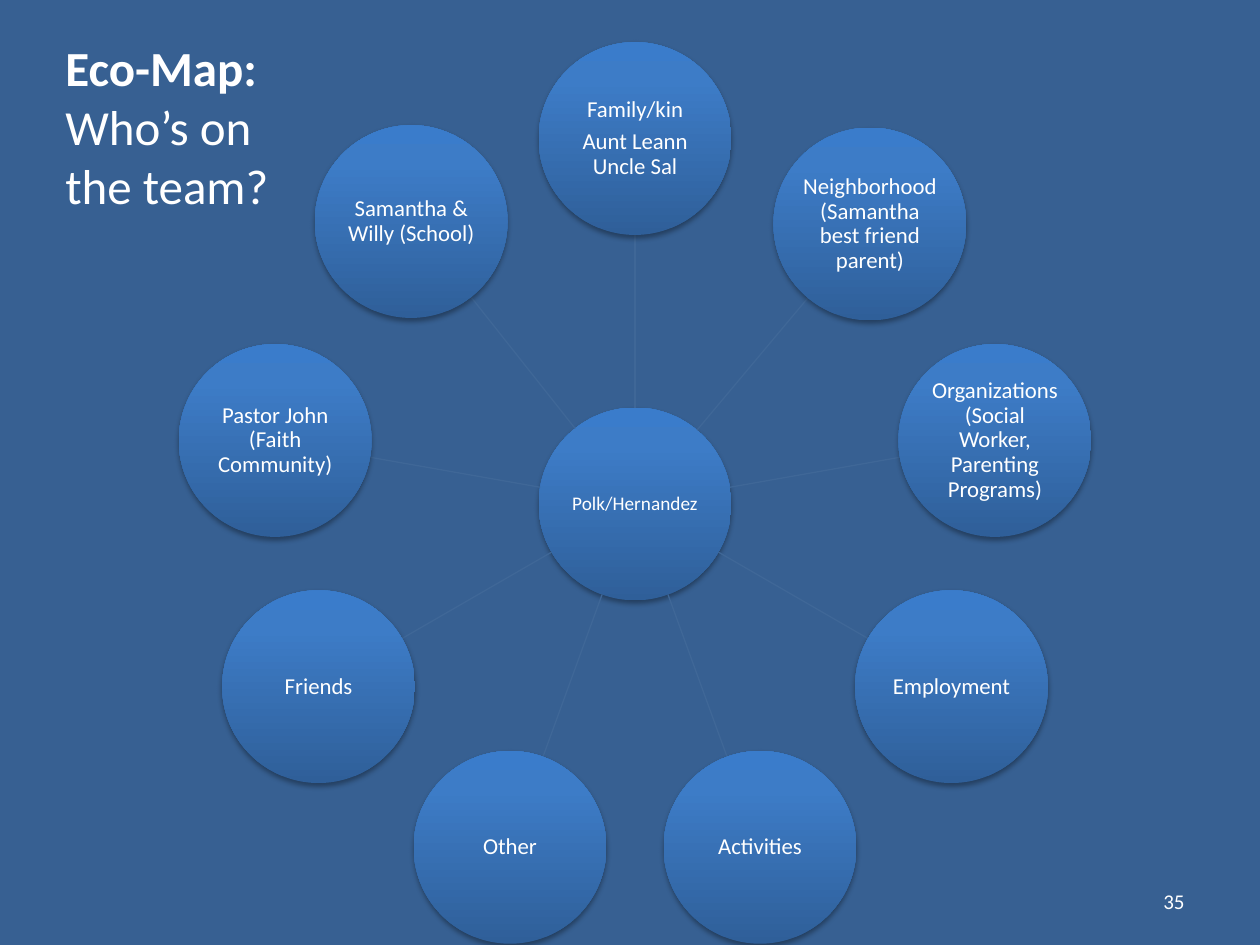
"""Build the eco-map slide: a family circle with its support team around it."""
from math import cos, radians, sin

from lxml import etree
from pptx import Presentation
from pptx.dml.color import RGBColor
from pptx.enum import shapes as kinds, text as txt
from pptx.oxml import parse_xml
from pptx.oxml.ns import nsdecls, qn
from pptx.util import Inches, Pt

NAVY = RGBColor(0x37, 0x60, 0x92)
WHITE = RGBColor(0xFF, 0xFF, 0xFF)
SPOKE = RGBColor(0x3F, 0x67, 0x97)
STOPS = [(0, "2F5F99"), (80, "3D7CC7"), (100, "3A7CCB")]
FONT = "Calibri"

HUB = "Polk/Hernandez"
TEAM = [
    ["Family/kin", "Aunt Leann Uncle Sal"],
    ["Neighborhood (Samantha best friend parent)"],
    ["Organizations (Social Worker, Parenting Programs)"],
    ["Employment"],
    ["Activities"],
    ["Other"],
    ["Friends"],
    ["Pastor John (Faith Community)"],
    ["Samantha & Willy (School)"],
]
MOVED = {8: (321.6, 2.86)}
TITLE = ["Eco-Map:", "Who’s on the team?"]
NUMBER = "35"

MID_X, MID_Y = 5.04, 4.0
RING, SIZE = 2.9, 1.53


def write(frame, lines, size, align):
    frame.word_wrap = True
    frame.text = "\n".join(lines)
    for para in frame.paragraphs:
        para.alignment = align
        for run in para.runs:
            run.font.size = Pt(size)
            run.font.name = FONT
            run.font.color.rgb = WHITE


def point(angle, reach):
    turn = radians(angle)
    return MID_X + reach * sin(turn), MID_Y - reach * cos(turn)


def paint(shape):
    stops = "".join(
        f'<a:gs pos="{pos * 1000}"><a:srgbClr val="{hue}"/></a:gs>' for pos, hue in STOPS
    )
    shape.fill.background()
    props = shape._element.spPr
    props.replace(props.find(qn("a:noFill")), parse_xml(
        f'<a:gradFill {nsdecls("a")} rotWithShape="1"><a:gsLst>{stops}</a:gsLst>'
        '<a:lin ang="16200000" scaled="0"/></a:gradFill>'))
    shape.line.fill.background()
    shape.shadow.inherit = False
    props.find(qn("a:effectLst")).append(parse_xml(
        f'<a:outerShdw {nsdecls("a")} blurRad="{Pt(3.1)}" dist="{Pt(1.8)}" dir="5400000" '
        'rotWithShape="0"><a:srgbClr val="000000"><a:alpha val="35000"/></a:srgbClr>'
        '</a:outerShdw>'))


def circle(slide, x, y, lines, size):
    shape = slide.shapes.add_shape(
        kinds.MSO_SHAPE.OVAL, Inches(x - SIZE / 2), Inches(y - SIZE / 2),
        Inches(SIZE), Inches(SIZE))
    paint(shape)
    frame = shape.text_frame
    frame.margin_left = frame.margin_right = Inches(0.01)
    frame.margin_top = frame.margin_bottom = Inches(0.01)
    frame.vertical_anchor = txt.MSO_ANCHOR.MIDDLE
    write(frame, lines, size, txt.PP_ALIGN.CENTER)
    for para in frame.paragraphs:
        para.line_spacing = 0.9
        para.space_after = Pt(size * 0.35)


def spoke(slide, angle, reach):
    ends = point(angle, SIZE / 2) + point(angle, reach - SIZE / 2)
    line = slide.shapes.add_connector(
        kinds.MSO_CONNECTOR.STRAIGHT, *[Inches(end) for end in ends])
    line.line.color.rgb = SPOKE
    line.line.width = Pt(0.75)
    etree.SubElement(line._element.spPr, qn("a:effectLst"))


def label(slide, box, lines, size, align):
    frame = slide.shapes.add_textbox(*[Inches(side) for side in box]).text_frame
    write(frame, lines, size, align)
    return frame


def main():
    deck = Presentation()
    deck.slide_width, deck.slide_height = Inches(10), Inches(7.5)
    slide = deck.slides.add_slide(deck.slide_layouts[6])
    slide.background.fill.solid()
    slide.background.fill.fore_color.rgb = NAVY

    circle(slide, MID_X, MID_Y, [HUB], 11)
    for i, lines in enumerate(TEAM):
        angle, reach = MOVED.get(i, (i * 360 / len(TEAM), RING))
        spoke(slide, angle, reach)
        circle(slide, *point(angle, reach), lines, 13)

    title = label(slide, (0.42, 0.25, 1.92, 1.51), TITLE, 28, txt.PP_ALIGN.LEFT)
    title.paragraphs[0].runs[0].font.bold = True
    page = label(slide, (7.17, 6.95, 2.33, 0.4), [NUMBER], 12, txt.PP_ALIGN.RIGHT)
    page.vertical_anchor = txt.MSO_ANCHOR.MIDDLE
    deck.save("out.pptx")


if __name__ == "__main__":
    main()
